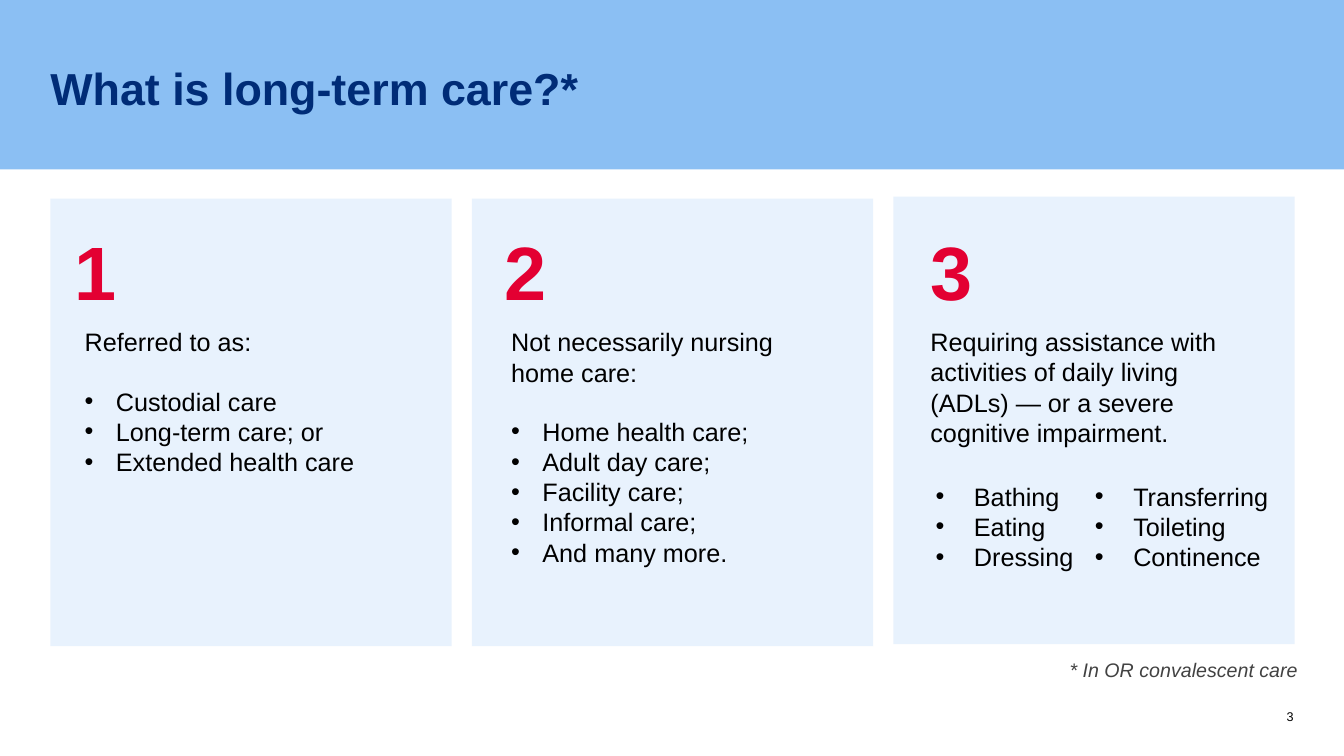
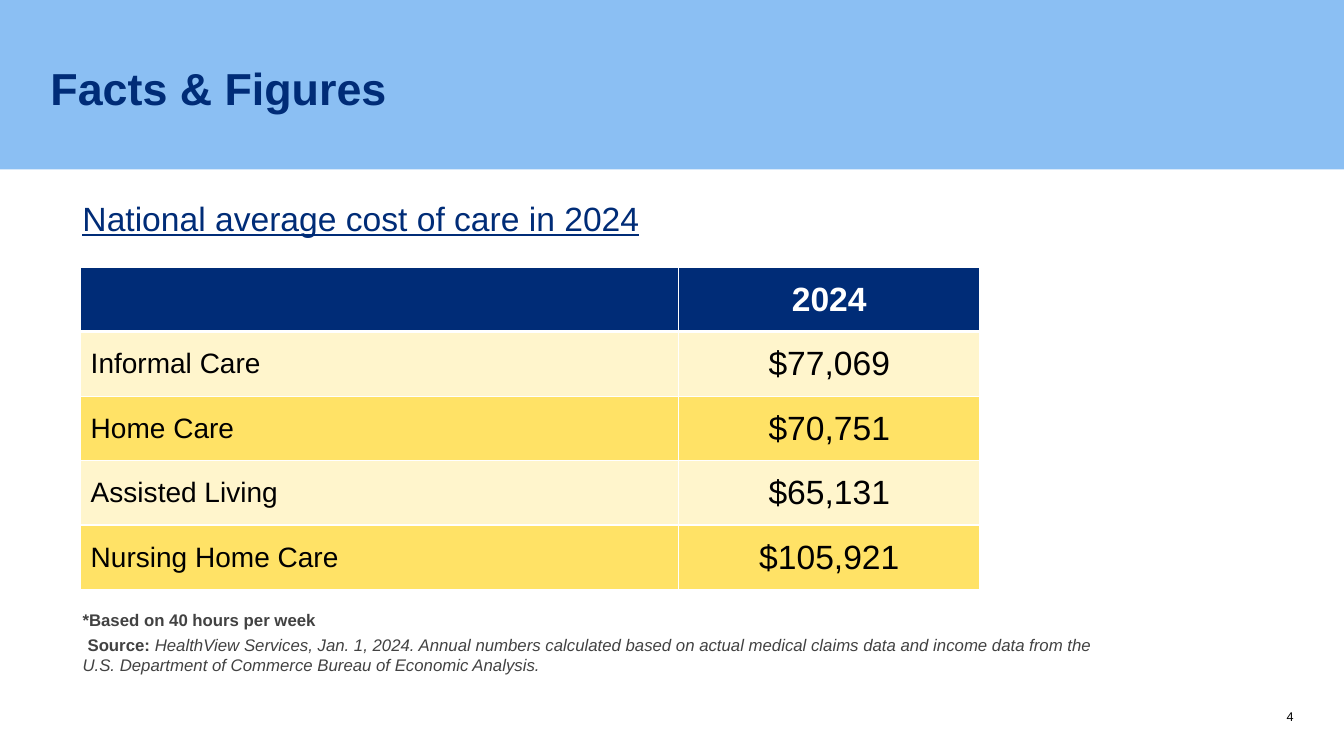
from lxml.etree import SubElement
from pptx import Presentation
from pptx.dml.color import RGBColor
from pptx.enum.shapes import MSO_SHAPE
from pptx.enum.text import MSO_ANCHOR, MSO_AUTO_SIZE, PP_ALIGN
from pptx.oxml.ns import qn
from pptx.util import Inches, Pt

FONT = "Arial"
SKY = RGBColor(0x8B, 0xBF, 0xF3)
PALE_BLUE = RGBColor(0xE8, 0xF2, 0xFD)
NAVY = RGBColor(0x00, 0x2C, 0x77)
RED = RGBColor(0xE3, 0x00, 0x32)
CREAM = RGBColor(0xFF, 0xF5, 0xCC)
YELLOW = RGBColor(0xFF, 0xE2, 0x66)
GRAY = RGBColor(0x42, 0x42, 0x42)
BLACK = RGBColor(0x00, 0x00, 0x00)
WHITE = RGBColor(0xFF, 0xFF, 0xFF)

TITLE_ONLY, FOUR_BODIES = 5, 4
BLANK_LINE = Pt(20.7)


def style_runs(paragraph, size, color=BLACK, bold=False, italic=False, underline=False):
    for run in paragraph.runs:
        font = run.font
        font.name, font.size, font.color.rgb = FONT, Pt(size), color
        font.bold, font.italic, font.underline = bold, italic, underline


def set_bullet(paragraph, hang):
    """Give the paragraph a hanging bullet, or none when hang is 0."""
    props = paragraph._p.get_or_add_pPr()
    props.set("marL", str(Inches(hang)))
    props.set("indent", str(-Inches(hang)))
    if hang:
        SubElement(props, qn("a:buFont"), typeface=FONT)
        SubElement(props, qn("a:buChar"), char="•")
    else:
        SubElement(props, qn("a:buNone"))


def set_borders(cell, top, bottom):
    """Draw white cell borders; top and bottom are widths in points."""
    props = cell._tc.get_or_add_tcPr()
    for side, width in (("L", 1), ("R", 1), ("T", top), ("B", bottom)):
        line = SubElement(props, qn(f"a:ln{side}"), w=str(Pt(width)))
        fill = SubElement(line, qn("a:solidFill"))
        SubElement(fill, qn("a:srgbClr"), val=str(WHITE))


class Deck:
    def __init__(self):
        self.prs = Presentation()
        self.prs.slide_width, self.prs.slide_height = Inches(13.33), Inches(7.5)
        self.slide = None

    def new_slide(self, layout, title, number):
        self.slide = self.prs.slides.add_slide(self.prs.slide_layouts[layout])
        self.panel(0, 0, 13.33, 1.68, SKY)
        heading = self.slide.shapes.title
        self.place(heading, 0.5, 0.32, 12.33, 1.16)
        frame = heading.text_frame
        self.clear_margins(frame)
        frame.auto_size = MSO_AUTO_SIZE.NONE
        frame.vertical_anchor = MSO_ANCHOR.MIDDLE
        frame.text = title
        paragraph = frame.paragraphs[0]
        paragraph.alignment, paragraph.line_spacing = PP_ALIGN.LEFT, 0.9
        style_runs(paragraph, 32, NAVY, bold=True)

        page = self.text(12.44, 6.93, 0.39, 0.25, str(number), 9)
        self.clear_margins(page)
        page.vertical_anchor = MSO_ANCHOR.BOTTOM
        page.paragraphs[0].alignment = PP_ALIGN.RIGHT

    @staticmethod
    def place(shape, left, top, width, height):
        shape.left, shape.top = Inches(left), Inches(top)
        shape.width, shape.height = Inches(width), Inches(height)

    @staticmethod
    def clear_margins(frame):
        frame.margin_left = frame.margin_right = 0
        frame.margin_top = frame.margin_bottom = 0

    def panel(self, left, top, width, height, color):
        """Add a plain rectangle behind the placeholders."""
        shapes = self.slide.shapes
        panel = shapes.add_shape(MSO_SHAPE.RECTANGLE, Inches(left), Inches(top),
                                 Inches(width), Inches(height))
        panel.shadow.inherit = False
        panel.fill.solid()
        panel.fill.fore_color.rgb = color
        panel.line.fill.background()
        shapes._spTree.insert(2, panel._element)

    def text(self, left, top, width, height, words, size, color=BLACK, **style):
        frame = self.slide.shapes.add_textbox(
            Inches(left), Inches(top), Inches(width), Inches(height)).text_frame
        frame.word_wrap = True
        frame.text = words
        style_runs(frame.paragraphs[0], size, color, **style)
        return frame

    def bullets(self, index, left, top, width, height, items, hang, intro=None):
        """Fill a body placeholder with an optional lead-in and a bullet list."""
        body = self.slide.placeholders[index]
        self.place(body, left, top, width, height)
        frame = body.text_frame
        frame.auto_size = MSO_AUTO_SIZE.NONE
        frame.vertical_anchor = MSO_ANCHOR.TOP
        lines = [(item, hang) for item in items]
        if intro:
            lines.insert(0, (intro, 0))
        for position, (words, indent) in enumerate(lines):
            paragraph = frame.add_paragraph() if position else frame.paragraphs[0]
            paragraph.text = words
            set_bullet(paragraph, indent)
            paragraph.space_before = Pt(0)
            if not indent:
                paragraph.space_after = BLANK_LINE
            style_runs(paragraph, 18)

    def table(self, left, top, widths, row_height, rows):
        table = self.slide.shapes.add_table(
            len(rows), len(widths), Inches(left), Inches(top),
            Inches(sum(widths)), Inches(row_height * len(rows))).table
        table.horz_banding = False
        for column, width in zip(table.columns, widths):
            column.width = Inches(width)
        for r, row in enumerate(rows):
            header = r == 0
            for c, words in enumerate(row):
                cell = table.cell(r, c)
                set_borders(cell, 3 if r == 1 else 1, 3 if header else 1)
                cell.fill.solid()
                cell.fill.fore_color.rgb = NAVY if header else (YELLOW, CREAM)[r % 2]
                cell.vertical_anchor = MSO_ANCHOR.MIDDLE
                cell.text_frame.text = words
                paragraph = cell.text_frame.paragraphs[0]
                paragraph.alignment = PP_ALIGN.CENTER if c else PP_ALIGN.LEFT
                style_runs(paragraph, 24 if c else 20, WHITE if header else BLACK, bold=header)


def add_definition(deck):
    deck.new_slide(FOUR_BODIES, "What is long-term care?*", 3)
    for i, (card_top, number_left) in enumerate([(1.97, 0.64), (1.97, 4.91), (1.95, 9.13)]):
        deck.panel(0.5 + 4.18 * i, card_top, 3.98, 4.44, PALE_BLUE)
        deck.text(number_left, 2.18, 1.38, 1.01, str(i + 1), 54, RED, bold=True)

    deck.bullets(1, 0.74, 3.19, 3.5, 1.62,
                 ["Custodial care", "Long-term care; or", "Extended health care"],
                 0.31, "Referred to as:")
    deck.bullets(2, 4.97, 3.19, 3.54, 2.52,
                 ["Home health care;", "Adult day care;", "Facility care;",
                  "Informal care;", "And many more."],
                 0.31, "Not necessarily nursing\vhome care:")
    deck.text(9.13, 3.19, 3.44, 1.31,
              "Requiring assistance with activities of daily living (ADLs) "
              "— or a severe cognitive impairment.", 18)
    deck.bullets(3, 9.18, 4.72, 1.7, 1.01, ["Bathing", "Eating", "Dressing"], 0.38)
    deck.bullets(4, 10.76, 4.72, 2.3, 1.01, ["Transferring", "Toileting", "Continence"], 0.38)
    deck.text(10.51, 6.48, 2.6, 0.34, "* In OR convalescent care", 14, GRAY, italic=True)


def add_costs(deck):
    deck.new_slide(TITLE_ONLY, "Facts & Figures", 4)
    deck.text(0.72, 1.91, 6.2, 0.5, "National average cost of care in 2024", 24, NAVY,
              underline=True)
    deck.table(0.8, 2.65, [5.93, 2.99], 0.64, [
        ("", "2024"),
        ("Informal Care", "$77,069"),
        ("Home Care", "$70,751"),
        ("Assisted Living", "$65,131"),
        ("Nursing Home Care", "$105,921"),
    ])
    deck.text(0.72, 6, 10.42, 0.3, "*Based on 40 hours per week", 12, GRAY, bold=True)
    source = deck.text(
        0.72, 6.25, 10.42, 0.5,
        "HealthView Services, Jan. 1, 2024. Annual numbers calculated based on actual "
        "medical claims data and income data from the U.S. Department of Commerce "
        "Bureau of Economic Analysis.", 12, GRAY, italic=True).paragraphs[0]
    label = source.add_run()
    label.text = "Source: "
    label.font.name, label.font.size = FONT, Pt(12)
    label.font.bold, label.font.color.rgb = True, GRAY
    source.runs[0]._r.addprevious(label._r)
    source._p.get_or_add_pPr().set("indent", str(Inches(0.05)))


def main():
    deck = Deck()
    add_definition(deck)
    add_costs(deck)
    deck.prs.save("out.pptx")


if __name__ == "__main__":
    main()
